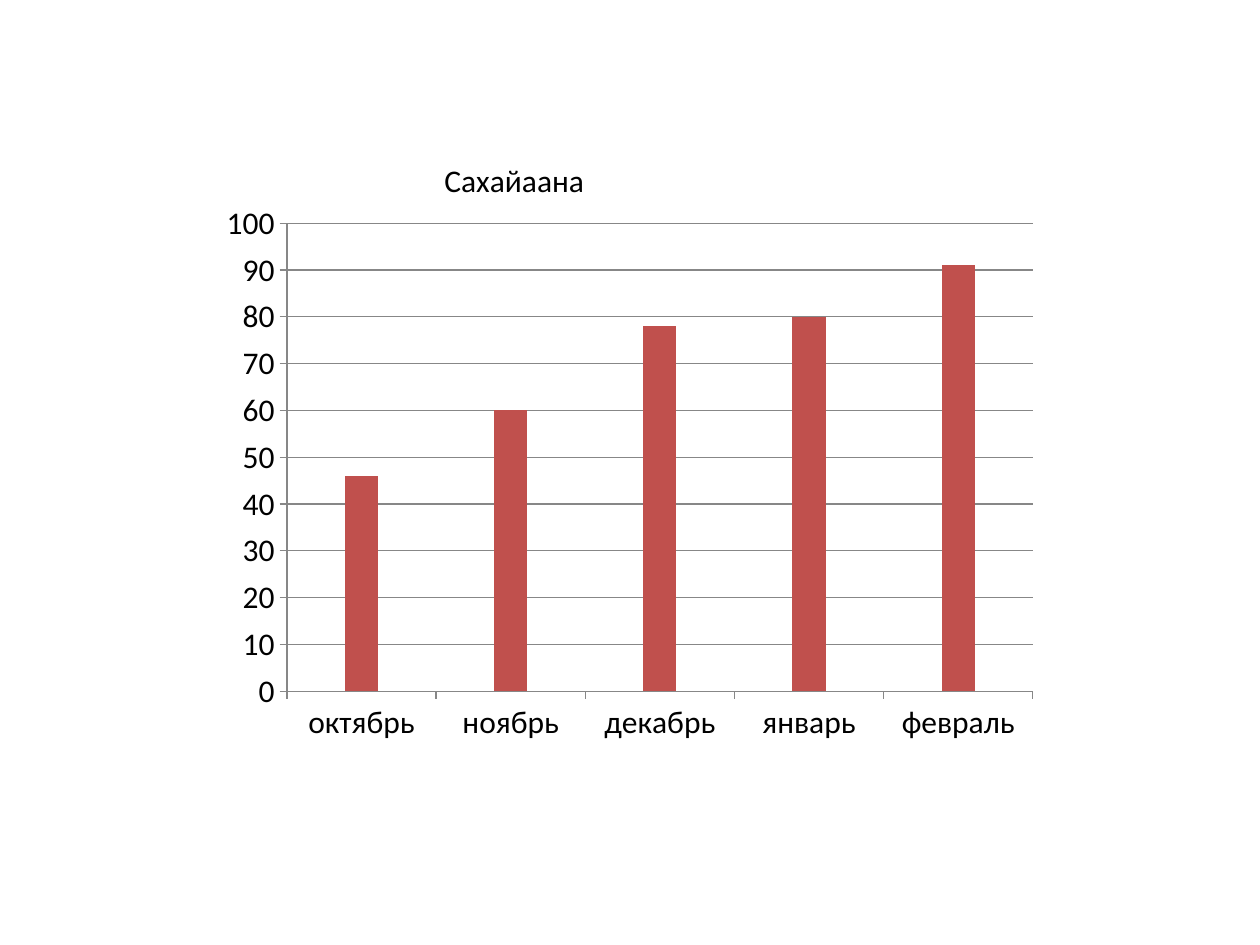
from pptx import Presentation
from pptx.chart.data import CategoryChartData
from pptx.dml.color import RGBColor
from pptx.enum.chart import XL_CHART_TYPE, XL_TICK_MARK
from pptx.enum.text import MSO_AUTO_SIZE
from pptx.util import Cm, Pt

COLUMNS = XL_CHART_TYPE.COLUMN_CLUSTERED
TICK_OUT, TICK_NONE = XL_TICK_MARK.OUTSIDE, XL_TICK_MARK.NONE
FIT_SHAPE = MSO_AUTO_SIZE.SHAPE_TO_FIT_TEXT

FONT = "Calibri"
BLACK = RGBColor(0x00, 0x00, 0x00)
GRAY = RGBColor(0x87, 0x87, 0x87)
BLUE = RGBColor(0x4F, 0x81, 0xBD)
RED = RGBColor(0xC0, 0x50, 0x4D)
GREEN = RGBColor(0x9B, 0xBB, 0x59)

MONTHS = ["октябрь", "ноябрь", "декабрь", "январь", "февраль"]
EMPTY = [None] * len(MONTHS)
# The empty series keep the columns in the middle of each month.
SERIES = [
    ("Series 1", EMPTY, BLUE),
    ("Series 2", [46, 60, 78, 80, 91], RED),
    ("Series 3", EMPTY, GREEN),
]


def style_font(font, size=18, color=BLACK):
    font.name = FONT
    font.size = Pt(size)
    font.color.rgb = color


def style_line(line, color=GRAY, width=0.75):
    line.color.rgb = color
    line.width = Pt(width)


def add_text(slide, text, left, top, width, height, size=18, color=BLACK):
    sp = slide.shapes.add_textbox(Cm(left), Cm(top), Cm(width), Cm(height))
    tf = sp.text_frame
    tf.word_wrap = False
    tf.auto_size = FIT_SHAPE
    r = tf.paragraphs[0].add_run()
    r.text = text
    style_font(r.font, size, color)


def add_column_chart(slide, left, top, width, height):
    data = CategoryChartData()
    data.categories = MONTHS
    for name, values, _ in SERIES:
        data.add_series(name, values)
    chart = slide.shapes.add_chart(
        COLUMNS, Cm(left), Cm(top), Cm(width), Cm(height), data).chart
    chart.has_title = False
    chart.has_legend = False
    style_font(chart.font)

    plot = chart.plots[0]
    plot.gap_width = 150
    plot.vary_by_categories = False
    for series, (_, _, color) in zip(plot.series, SERIES):
        series.format.fill.solid()
        series.format.fill.fore_color.rgb = color
        series.invert_if_negative = False

    for axis in (chart.category_axis, chart.value_axis):
        axis.major_tick_mark = TICK_OUT
        axis.minor_tick_mark = TICK_NONE
        style_line(axis.format.line)
    value_axis = chart.value_axis
    value_axis.minimum_scale, value_axis.maximum_scale = 0, 100
    value_axis.major_unit = 10
    value_axis.has_major_gridlines = True
    style_line(value_axis.major_gridlines.format.line)


def main():
    prs = Presentation()
    prs.slide_width, prs.slide_height = Cm(25.4), Cm(19.05)
    slide = prs.slides.add_slide(prs.slide_layouts[6])
    add_column_chart(slide, 4.23, 3.89, 16.93, 11.29)
    add_text(slide, "Сахайаана", 8.71, 3.12, 3.35, 1.03)
    prs.save("out.pptx")


if __name__ == "__main__":
    main()
